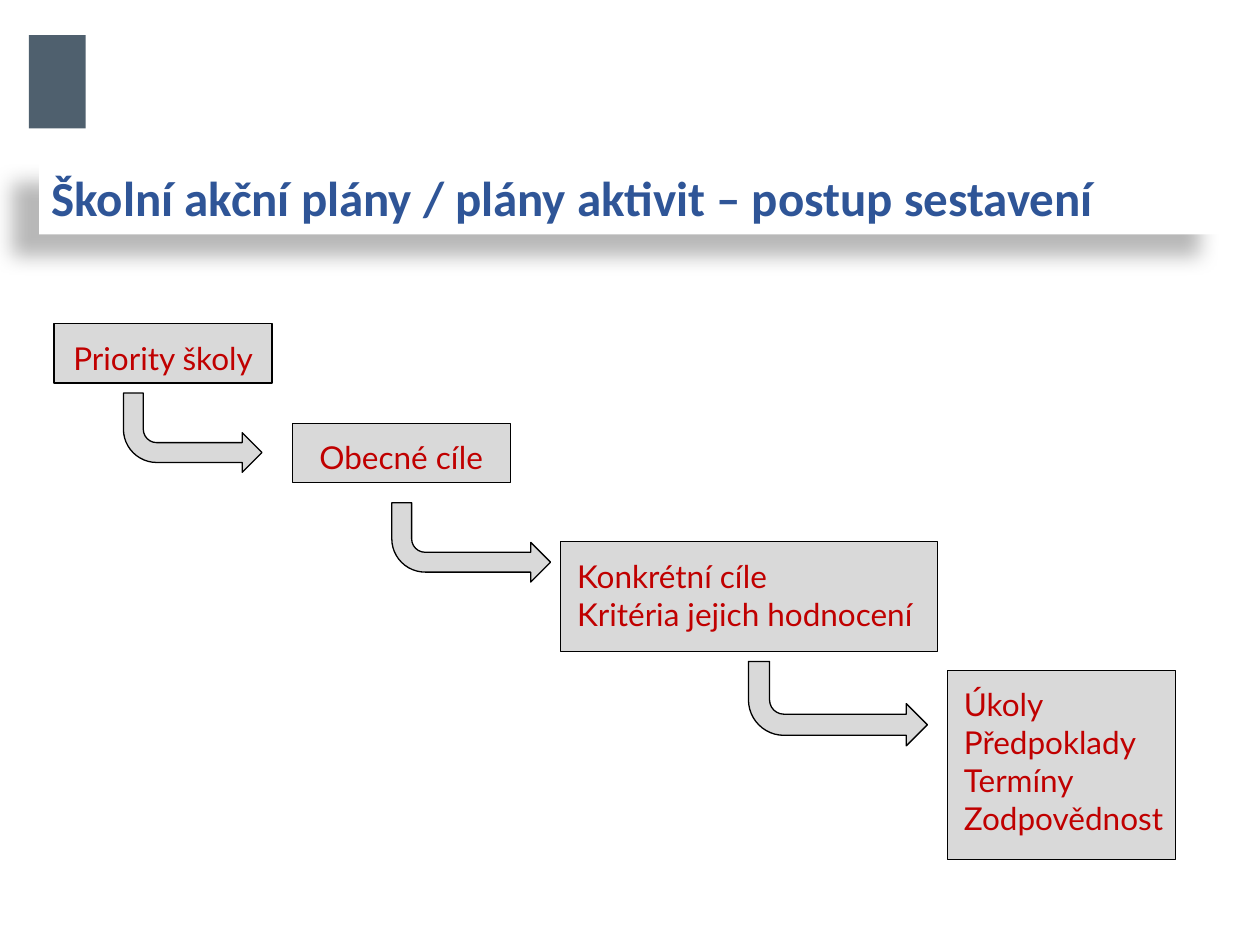
from dataclasses import dataclass

from lxml import etree
from pptx import Presentation, util as u
from pptx.dml.color import RGBColor
from pptx.enum import shapes, text
from pptx.oxml import ns

COLUMNS, ROWS = 100, 75
WIDTH, HEIGHT = u.Inches(10), u.Inches(7.5)


@dataclass(frozen=True)
class Theme:
    """Colours, fonts and sizes used on the slide."""
    white: str = "FFFFFF"
    black: str = "000000"
    panel: str = "D9D9D9"
    title: str = "2F5597"
    step: str = "C00000"
    logo: str = "4F606E"
    title_font: str = "Calibri"
    step_font: str = "Lato"
    title_size: int = 28
    step_size: int = 18
    line_width: float = 0.75


THEME = Theme()

STEPS = [
    ((4.3, 25.7, 17.3, 4.7), ["Priority školy"], True),
    ((23.2, 33.6, 17.3, 4.7), ["Obecné cíle"], True),
    ((44.5, 43, 29.9, 8.7), ["Konkrétní cíle", "Kritéria jejich hodnocení"], False),
    ((75.2, 53.2, 18.1, 15), ["Úkoly", "Předpoklady", "Termíny", "Zodpovědnost"], False),
]
ARROWS = [(9.8, 31.2, 11, 6.3), (31.1, 39.9, 12.6, 6.3), (59.4, 52.5, 14.2, 6.7)]


def place(box):
    """Turn a box in grid columns and rows into slide lengths."""
    left, top, width, height = box
    return (round(left * WIDTH / COLUMNS), round(top * HEIGHT / ROWS),
            round(width * WIDTH / COLUMNS), round(height * HEIGHT / ROWS))


def paint(shape, fill, line=None):
    """Give a shape a solid fill and an optional thin line."""
    shape.fill.solid()
    shape.fill.fore_color.rgb = RGBColor.from_string(fill)
    if line:
        shape.line.color.rgb = RGBColor.from_string(line)
        shape.line.width = u.Pt(THEME.line_width)
    else:
        shape.line.fill.background()


def add_shape(slide, kind, box, fill, line=None):
    """Add a preset shape without a shadow."""
    shape = slide.shapes.add_shape(kind, *place(box))
    shape.shadow.inherit = False
    paint(shape, fill, line)
    return shape


def write(shape, lines, *, font, size, color, bold=False, align=text.PP_ALIGN.LEFT,
          anchor=text.MSO_ANCHOR.TOP, margins=(0.1, 0.05, 0.1, 0.05)):
    """Write lines of text into a shape, one paragraph each."""
    frame = shape.text_frame
    frame.word_wrap = True
    frame.auto_size = text.MSO_AUTO_SIZE.NONE
    frame.vertical_anchor = anchor
    (frame.margin_left, frame.margin_top,
     frame.margin_right, frame.margin_bottom) = map(u.Inches, margins)
    frame.text = "\n".join(lines)
    for paragraph in frame.paragraphs:
        paragraph.alignment = align
        style = paragraph.runs[0].font
        style.name, style.size, style.bold = font, u.Pt(size), bold
        style.color.rgb = RGBColor.from_string(color)


def add_shadow(shape, *, color, opacity, blur, distance, angle):
    """Add an outer shadow to a shape."""
    shape.shadow.inherit = False
    effects = shape.element.spPr.find(ns.qn("a:effectLst"))
    shadow = etree.SubElement(effects, ns.qn("a:outerShdw"), blurRad=str(u.Pt(blur)),
                              dist=str(u.Pt(distance)), dir=str(angle * 60000),
                              algn="ctr", rotWithShape="0")
    tint = etree.SubElement(shadow, ns.qn("a:srgbClr"), val=color)
    etree.SubElement(tint, ns.qn("a:alpha"), val=str(opacity * 1000))


def draw_logo(slide, box):
    """Draw the plain block in the logo's place."""
    add_shape(slide, shapes.MSO_SHAPE.RECTANGLE, box, THEME.logo)


def draw_title(slide, box, title):
    """Format the title placeholder as a white band with a shadow."""
    shape = slide.shapes.title
    shape.left, shape.top, shape.width, shape.height = place(box)
    paint(shape, THEME.white)
    add_shadow(shape, color=THEME.black, opacity=28, blur=11.8, distance=19.7, angle=141)
    write(shape, [title], font=THEME.title_font, size=THEME.title_size,
          color=THEME.title, bold=True, anchor=text.MSO_ANCHOR.MIDDLE)


def draw_step(slide, box, lines, centred):
    """Draw one step of the cascade."""
    shape = add_shape(slide, shapes.MSO_SHAPE.RECTANGLE, box, THEME.panel, THEME.black)
    write(shape, lines, font=THEME.step_font, size=THEME.step_size, color=THEME.step,
          align=text.PP_ALIGN.CENTER if centred else text.PP_ALIGN.LEFT,
          margins=(0 if centred else 0.13, 0.12, 0, 0.05))


def draw_arrow(slide, box):
    """Draw a bent arrow that leads down and right to the next step."""
    arrow = add_shape(slide, shapes.MSO_SHAPE.BENT_ARROW, box, THEME.panel, THEME.black)
    arrow.adjustments[3] = 0.42
    arrow.element.spPr.get_or_add_xfrm().set("flipV", "1")


def main():
    """Build and save the slide."""
    presentation = Presentation()
    presentation.slide_width, presentation.slide_height = WIDTH, HEIGHT
    slide = presentation.slides.add_slide(presentation.slide_layouts[5])
    draw_logo(slide, (2.3, 2.8, 4.5, 7.4))
    draw_title(slide, (3.1, 12.7, 94.1, 5.9),
               "Školní akční plány / plány aktivit – postup sestavení")
    for box, lines, centred in STEPS:
        draw_step(slide, box, lines, centred)
    for box in ARROWS:
        draw_arrow(slide, box)
    presentation.save("out.pptx")


if __name__ == "__main__":
    main()
